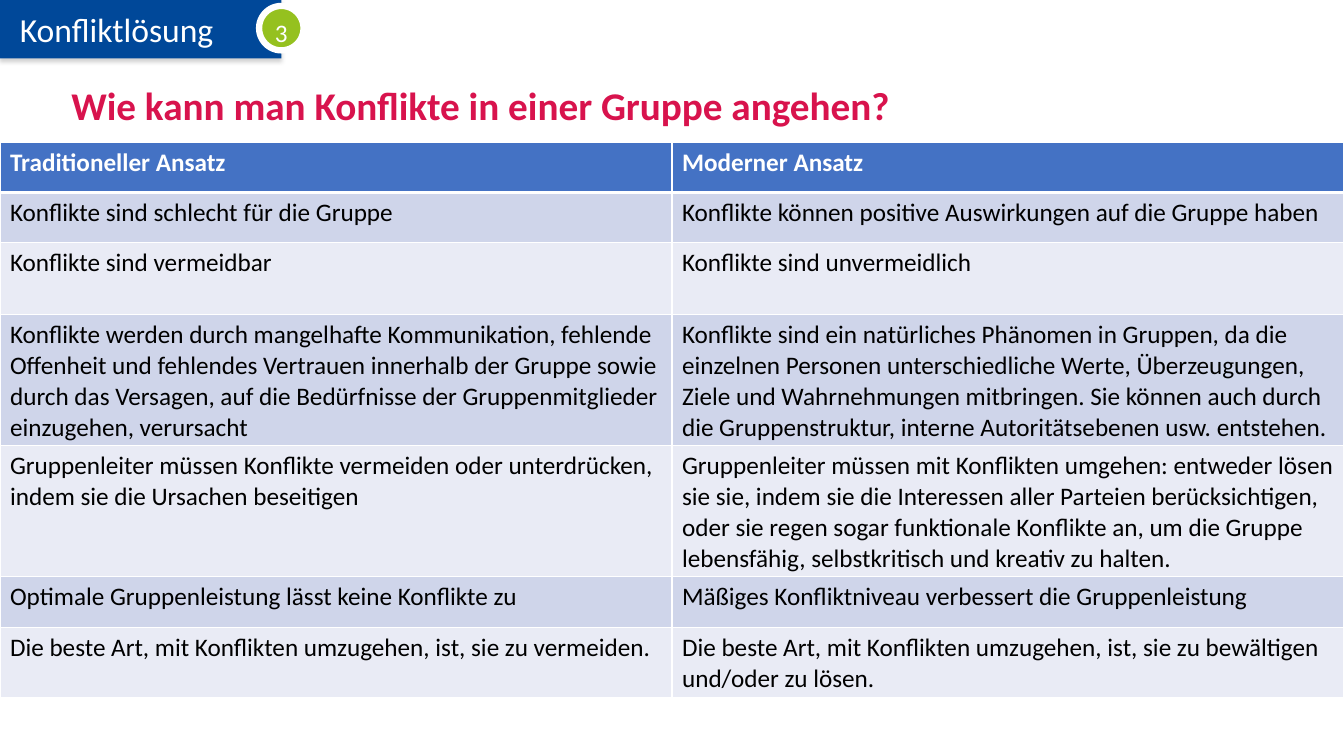
import pptx
import pptx.util
import pptx.dml.color
import pptx.enum.shapes
import pptx.enum.text
import pptx.oxml
import pptx.oxml.ns

Cm = pptx.util.Cm
Pt = pptx.util.Pt
MIDDLE = pptx.enum.text.MSO_ANCHOR.MIDDLE
TOP = pptx.enum.text.MSO_ANCHOR.TOP
SHAPES = pptx.enum.shapes.MSO_SHAPE

COLORS = {
    "white": "FFFFFF",
    "black": "000000",
    "blue": "004899",
    "green": "95C11F",
    "red": "D8134D",
    "header": "4472C4",
    "odd": "CFD5EA",
    "even": "E9EBF5",
    "shadow": "808080",
}

APPROACHES = [
    ("Traditioneller Ansatz", "Moderner Ansatz"),
    ("Konflikte sind schlecht für die Gruppe",
     "Konflikte können positive Auswirkungen auf die Gruppe haben"),
    ("Konflikte sind vermeidbar", "Konflikte sind unvermeidlich"),
    ("Konflikte werden durch mangelhafte Kommunikation, fehlende Offenheit und "
     "fehlendes Vertrauen innerhalb der Gruppe sowie durch das Versagen, auf die "
     "Bedürfnisse der Gruppenmitglieder einzugehen, verursacht",
     "Konflikte sind ein natürliches Phänomen in Gruppen, da die einzelnen Personen "
     "unterschiedliche Werte, Überzeugungen, Ziele und Wahrnehmungen mitbringen. Sie "
     "können auch durch die Gruppenstruktur, interne Autoritätsebenen usw. entstehen."),
    ("Gruppenleiter müssen Konflikte vermeiden oder unterdrücken, indem sie die "
     "Ursachen beseitigen",
     "Gruppenleiter müssen mit Konflikten umgehen: entweder lösen sie sie, indem sie "
     "die Interessen aller Parteien berücksichtigen, oder sie regen sogar funktionale "
     "Konflikte an, um die Gruppe lebensfähig, selbstkritisch und kreativ zu halten."),
    ("Optimale Gruppenleistung lässt keine Konflikte zu",
     "Mäßiges Konfliktniveau verbessert die Gruppenleistung"),
    ("Die beste Art, mit Konflikten umzugehen, ist, sie zu vermeiden.",
     "Die beste Art, mit Konflikten umzugehen, ist, sie zu bewältigen und/oder zu lösen."),
]
ROW_HEIGHTS = [1.27, 1.27, 1.81, 3.18, 3.18, 1.27, 1.27]


class SlideBuilder:
    font_name = "Calibri"

    def __init__(self, slide):
        self.slide = slide

    def color(self, name):
        return pptx.dml.color.RGBColor.from_string(COLORS[name])

    def add_run(self, frame, text, size, color, bold=False, spacing=None):
        paragraph = frame.paragraphs[0]
        paragraph.alignment = pptx.enum.text.PP_ALIGN.LEFT
        if spacing:
            paragraph.line_spacing = spacing
        run = paragraph.add_run()
        run.text = text
        run.font.name = self.font_name
        run.font.size = Pt(size)
        run.font.bold = bold
        run.font.color.rgb = self.color(color)

    def shape(self, kind, box, fill, line=None, line_width=0):
        shape = self.slide.shapes.add_shape(kind, *map(Cm, box))
        shape.shadow.inherit = False
        shape.fill.solid()
        shape.fill.fore_color.rgb = self.color(fill)
        if line:
            shape.line.color.rgb = self.color(line)
            shape.line.width = Pt(line_width)
        else:
            shape.line.fill.background()
        return shape

    def drop_shadow(self, shape):
        effects = shape._element.spPr.find(pptx.oxml.ns.qn("a:effectLst"))
        effects.append(pptx.oxml.parse_xml(
            f'<a:outerShdw {pptx.oxml.ns.nsdecls("a")} blurRad="{Pt(3.1)}" '
            f'dist="{Pt(1.8)}" dir="5400000" rotWithShape="0">'
            f'<a:srgbClr val="{COLORS["shadow"]}"><a:alpha val="35000"/></a:srgbClr>'
            '</a:outerShdw>'))

    def banner(self, box, text):
        banner = self.shape(SHAPES.RECTANGLE, box, "blue")
        self.drop_shadow(banner)
        frame = banner.text_frame
        frame.margin_left = Cm(0.5)
        frame.vertical_anchor = MIDDLE
        self.add_run(frame, text, 24, "white")

    def text(self, box, text, size, color, bold=False, spacing=None, anchor=TOP):
        frame = self.slide.shapes.add_textbox(*map(Cm, box)).text_frame
        frame.word_wrap = True
        frame.vertical_anchor = anchor
        self.add_run(frame, text, size, color, bold, spacing)

    def cell_borders(self, cell, row):
        widths = {"L": 1, "R": 1, "T": 3 if row == 1 else 1, "B": 3 if row == 0 else 1}
        properties = cell._tc.get_or_add_tcPr()
        for side, width in widths.items():
            properties.append(pptx.oxml.parse_xml(
                f'<a:ln{side} {pptx.oxml.ns.nsdecls("a")} w="{Pt(width)}"><a:solidFill>'
                f'<a:srgbClr val="{COLORS["white"]}"/></a:solidFill></a:ln{side}>'))

    def table(self, left, top, width, heights, rows):
        table = self.slide.shapes.add_table(
            len(rows), len(rows[0]), Cm(left), Cm(top), Cm(width), Cm(sum(heights))).table
        for row, texts in enumerate(rows):
            table.rows[row].height = Cm(heights[row])
            fill = "header" if row == 0 else "odd" if row % 2 else "even"
            for column, text in enumerate(texts):
                cell = table.cell(row, column)
                self.cell_borders(cell, row)
                cell.fill.solid()
                cell.fill.fore_color.rgb = self.color(fill)
                self.add_run(cell.text_frame, text, 18,
                             "black" if row else "white", bold=row == 0)


def main():
    presentation = pptx.Presentation()
    presentation.slide_width = Cm(33.87)
    presentation.slide_height = Cm(19.05)
    builder = SlideBuilder(presentation.slides.add_slide(presentation.slide_layouts[6]))
    builder.banner((0, 0, 7.09, 1.47), "Konfliktlösung")
    builder.shape(SHAPES.OVAL, (6.53, 0.15, 1.12, 1.12), "green", "white", 4.5)
    builder.text((6.68, -0.08, 0.89, 1.3), "3", 18, "white", spacing=1.5)
    builder.text((1.55, 1.88, 30.73, 1.68),
                 "Wie kann man Konflikte in einer Gruppe angehen?",
                 28, "red", bold=True, spacing=0.9, anchor=MIDDLE)
    builder.table(0, 3.58, 33.87, ROW_HEIGHTS, APPROACHES)
    presentation.save("out.pptx")


if __name__ == "__main__":
    main()
